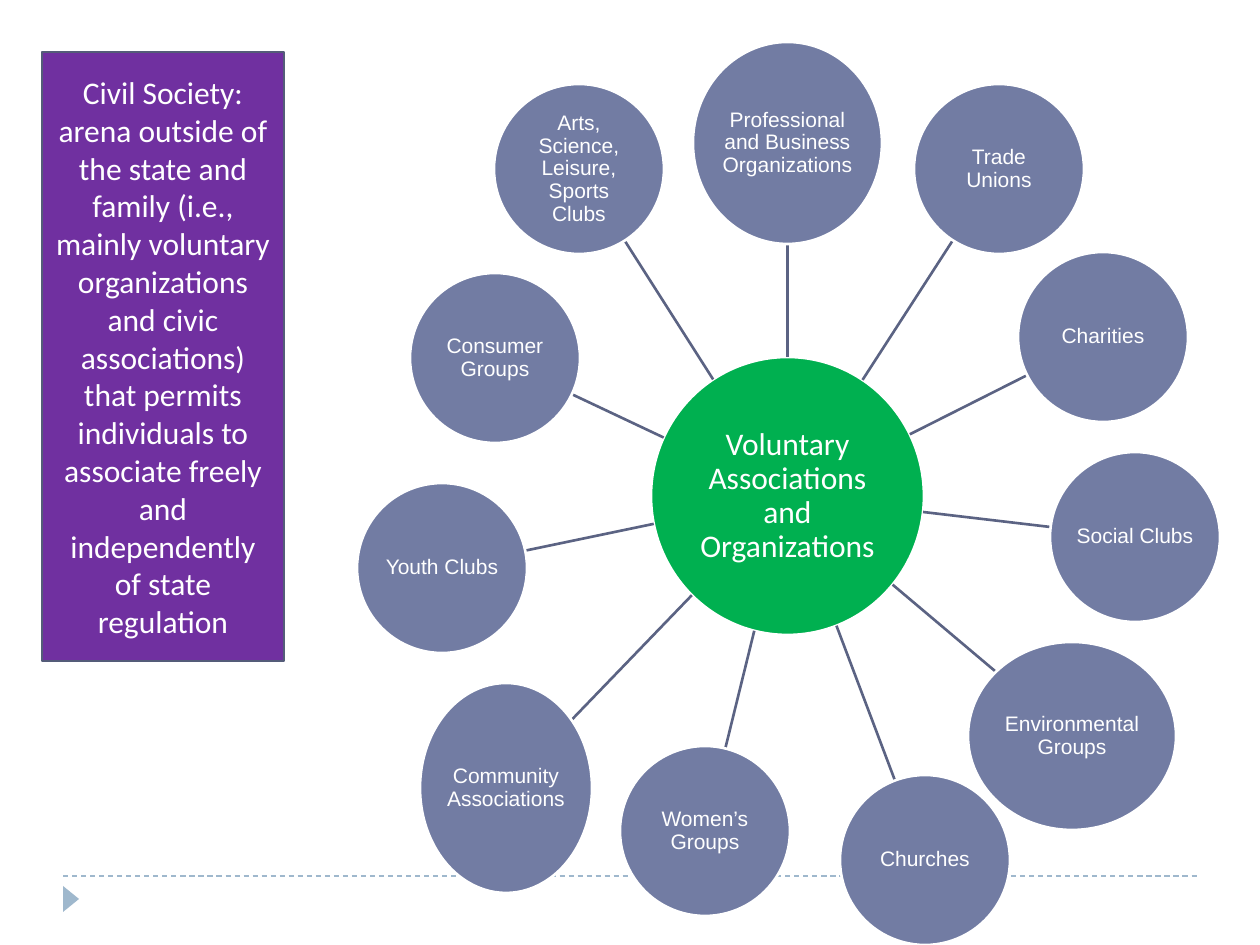
import math
from dataclasses import dataclass

import pptx
import pptx.dml.color
import pptx.enum.dml
import pptx.enum.shapes
import pptx.enum.text
import pptx.oxml.ns
import pptx.util
from lxml import etree

RGBColor = pptx.dml.color.RGBColor
Shape = pptx.enum.shapes.MSO_SHAPE

WHITE = RGBColor(0xFF, 0xFF, 0xFF)
SLATE = RGBColor(0x72, 0x7C, 0xA3)
SPOKE = RGBColor(0x5B, 0x63, 0x83)
GREEN = RGBColor(0x00, 0xB0, 0x50)
PURPLE = RGBColor(0x70, 0x30, 0xA0)
PANEL_EDGE = RGBColor(0x54, 0x5C, 0x79)
PALE_BLUE = RGBColor(0x9F, 0xB8, 0xCD)

PX_PER_INCH = 126
CIRCLE = 170
CIRCLE_INSET = 1


@dataclass(frozen=True)
class Box:
    left: int
    top: int
    width: int = CIRCLE
    height: int = CIRCLE

    def centre(self) -> tuple[float, float]:
        return self.left + self.width / 2, self.top + self.height / 2

    def edge_towards(self, other: "Box") -> tuple[float, float]:
        """Point where the ellipse in this box meets the line to the other centre."""
        (x, y), (other_x, other_y) = self.centre(), other.centre()
        dx, dy = other_x - x, other_y - y
        reach = 1 / math.hypot(dx / (self.width / 2), dy / (self.height / 2))
        return x + dx * reach, y + dy * reach


@dataclass(frozen=True)
class Label:
    text: str
    font: str
    size: int
    line_spacing: float = 1.0


@dataclass(frozen=True)
class Group:
    name: str
    box: Box


HUB = Box(651, 357, 273, 278)
HUB_LABEL = Label("Voluntary Associations and Organizations", "Calibri", 18, 0.9)
GROUPS = [
    Group("Professional and Business Organizations", Box(693, 42, 189, 202)),
    Group("Trade Unions", Box(914, 84)),
    Group("Charities", Box(1018, 252)),
    Group("Social Clubs", Box(1050, 452)),
    Group("Environmental Groups", Box(968, 642, 208, 188)),
    Group("Churches", Box(840, 775)),
    Group("Women’s Groups", Box(620, 746)),
    Group("Community Associations", Box(420, 683, 172, 210)),
    Group("Youth Clubs", Box(357, 483)),
    Group("Consumer Groups", Box(410, 273)),
    Group("Arts, Science, Leisure, Sports Clubs", Box(494, 84)),
]
DEFINITION = Label(
    "Civil Society: arena outside of the state and family (i.e., mainly voluntary "
    "organizations and civic associations) that permits individuals to associate "
    "freely and independently of state regulation",
    "Calibri",
    18,
)


def px(length: float) -> int:
    return round(length * 914400 / PX_PER_INCH)


def set_values(target, values: dict) -> None:
    for name, value in values.items():
        setattr(target, name, value)


def add_line(slide, start: tuple, end: tuple, color: RGBColor, width: float):
    points = [px(value) for value in (*start, *end)]
    connector = slide.shapes.add_connector(
        pptx.enum.shapes.MSO_CONNECTOR.STRAIGHT, *points
    )
    connector.line.color.rgb = color
    connector.line.width = pptx.util.Pt(width)
    properties = connector._element.spPr
    etree.SubElement(properties, pptx.oxml.ns.qn("a:effectLst"))
    return connector


def add_filled(slide, kind: Shape, box: Box, fill: RGBColor, edge: RGBColor | None):
    shape = slide.shapes.add_shape(
        kind, px(box.left), px(box.top), px(box.width), px(box.height)
    )
    shape.shadow.inherit = False
    shape.fill.solid()
    shape.fill.fore_color.rgb = fill
    if edge is None:
        shape.line.fill.background()
    else:
        shape.line.color.rgb = edge
        shape.line.width = pptx.util.Pt(1.5)
    return shape


def write_label(shape, label: Label, inset: int | None = None) -> None:
    frame = shape.text_frame
    set_values(frame, {
        "word_wrap": True,
        "vertical_anchor": pptx.enum.text.MSO_ANCHOR.MIDDLE,
    })
    if inset is not None:
        sides = ("left", "top", "right", "bottom")
        set_values(frame, {f"margin_{side}": px(inset) for side in sides})
    paragraph = frame.paragraphs[0]
    paragraph.text = label.text
    set_values(paragraph, {
        "alignment": pptx.enum.text.PP_ALIGN.CENTER,
        "line_spacing": label.line_spacing,
    })
    font = paragraph.runs[0].font
    set_values(font, {"name": label.font, "size": pptx.util.Pt(label.size)})
    font.color.rgb = WHITE


def add_circle(slide, box: Box, fill: RGBColor, label: Label) -> None:
    circle = add_filled(slide, Shape.OVAL, box, fill, WHITE)
    write_label(circle, label, CIRCLE_INSET)


def add_footer(slide) -> None:
    rule = add_line(slide, (63, 876), (1197, 876), PALE_BLUE, 0.75)
    rule.line.dash_style = pptx.enum.dml.MSO_LINE.DASH
    marker = add_filled(
        slide, Shape.ISOSCELES_TRIANGLE, Box(58, 891, 26, 16), PALE_BLUE, None
    )
    marker.rotation = 90


def main() -> None:
    presentation = pptx.Presentation()
    set_values(presentation, {"slide_width": px(1260), "slide_height": px(945)})
    slide = presentation.slides.add_slide(presentation.slide_layouts[6])

    add_footer(slide)
    add_circle(slide, HUB, GREEN, HUB_LABEL)
    for group in GROUPS:
        start, end = HUB.edge_towards(group.box), group.box.edge_towards(HUB)
        add_line(slide, start, end, SPOKE, 1.5)
        add_circle(slide, group.box, SLATE, Label(group.name, "Arial", 12, 0.9))

    panel = add_filled(
        slide, Shape.RECTANGLE, Box(42, 52, 242, 609), PURPLE, PANEL_EDGE
    )
    write_label(panel, DEFINITION)
    presentation.save("out.pptx")


if __name__ == "__main__":
    main()
